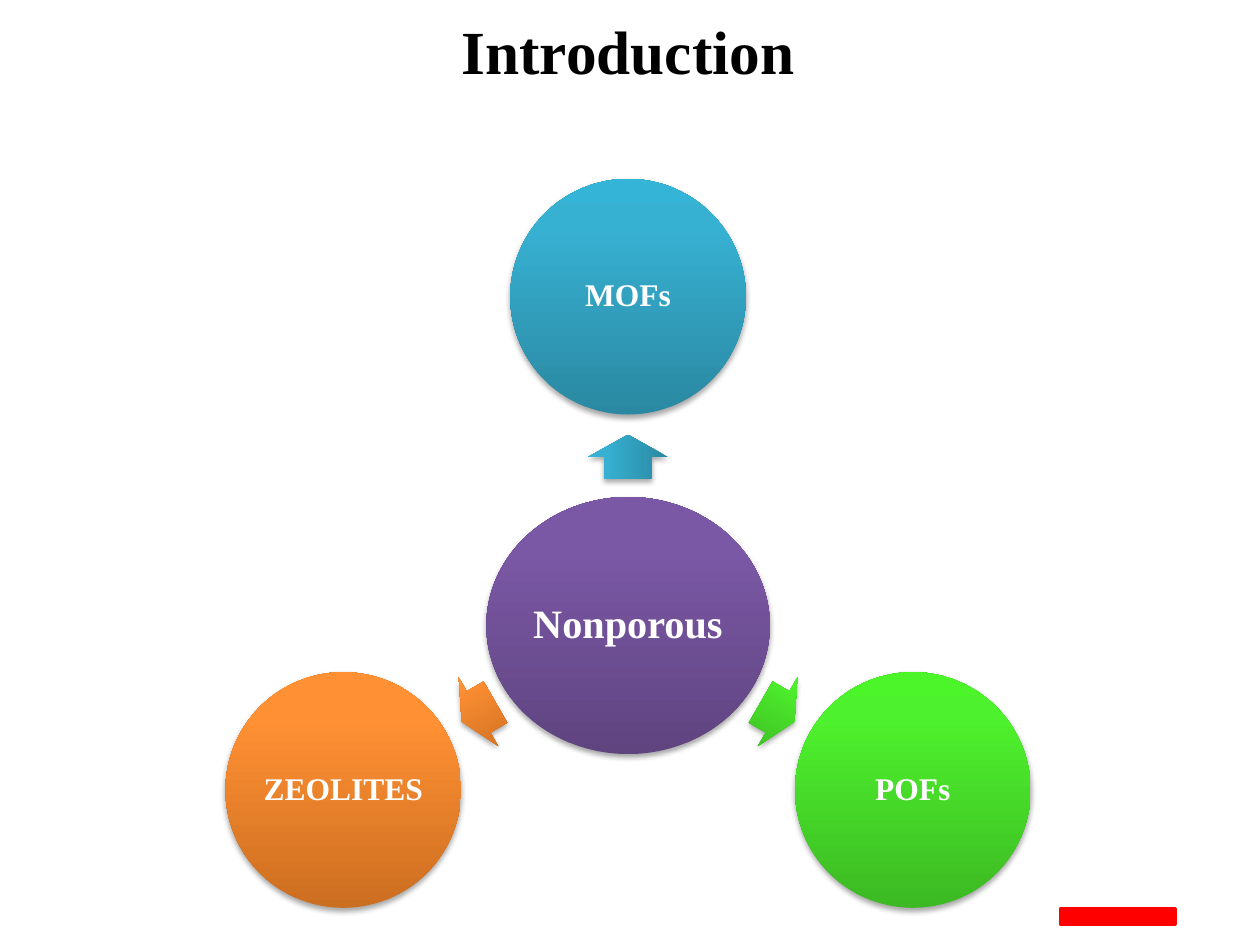
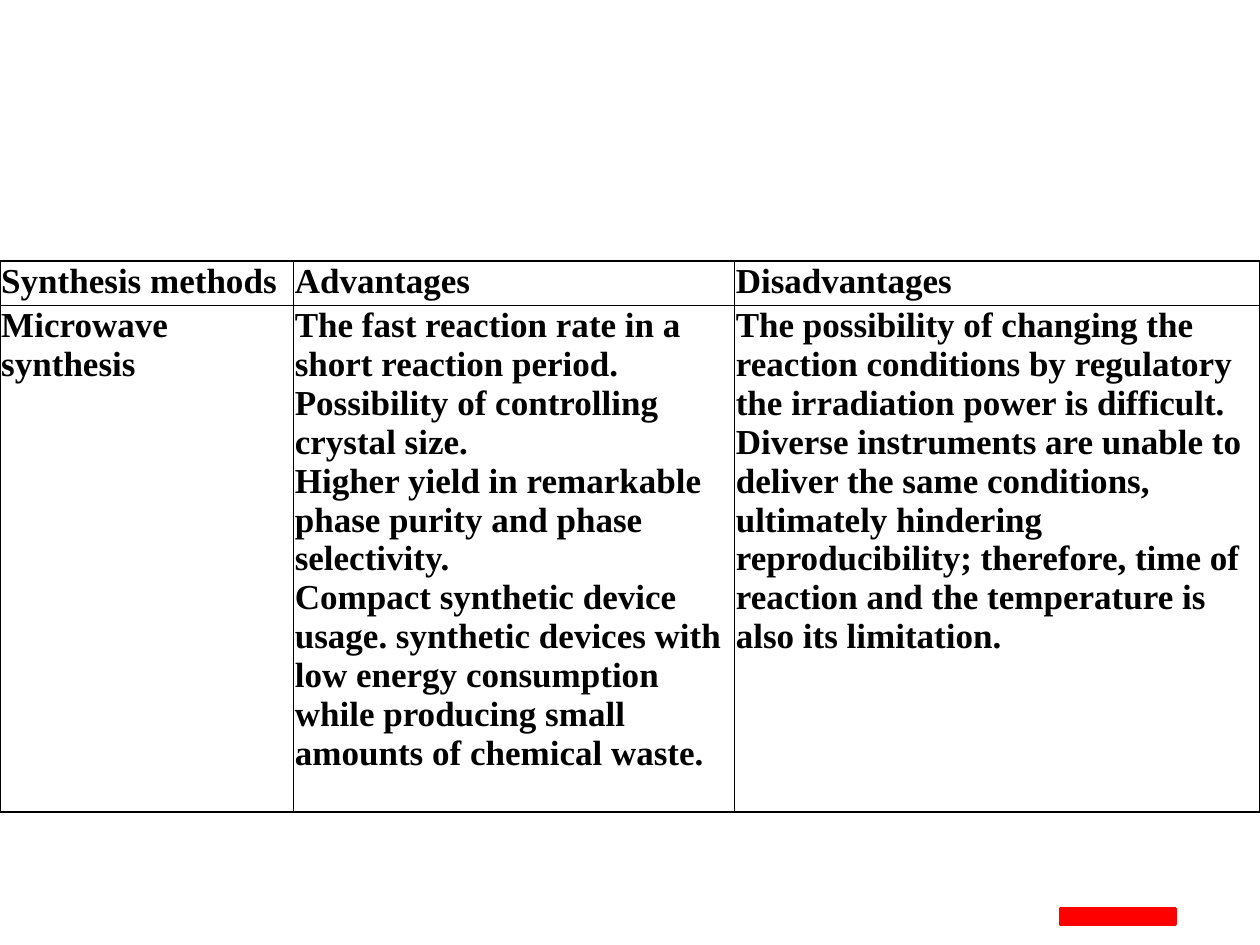
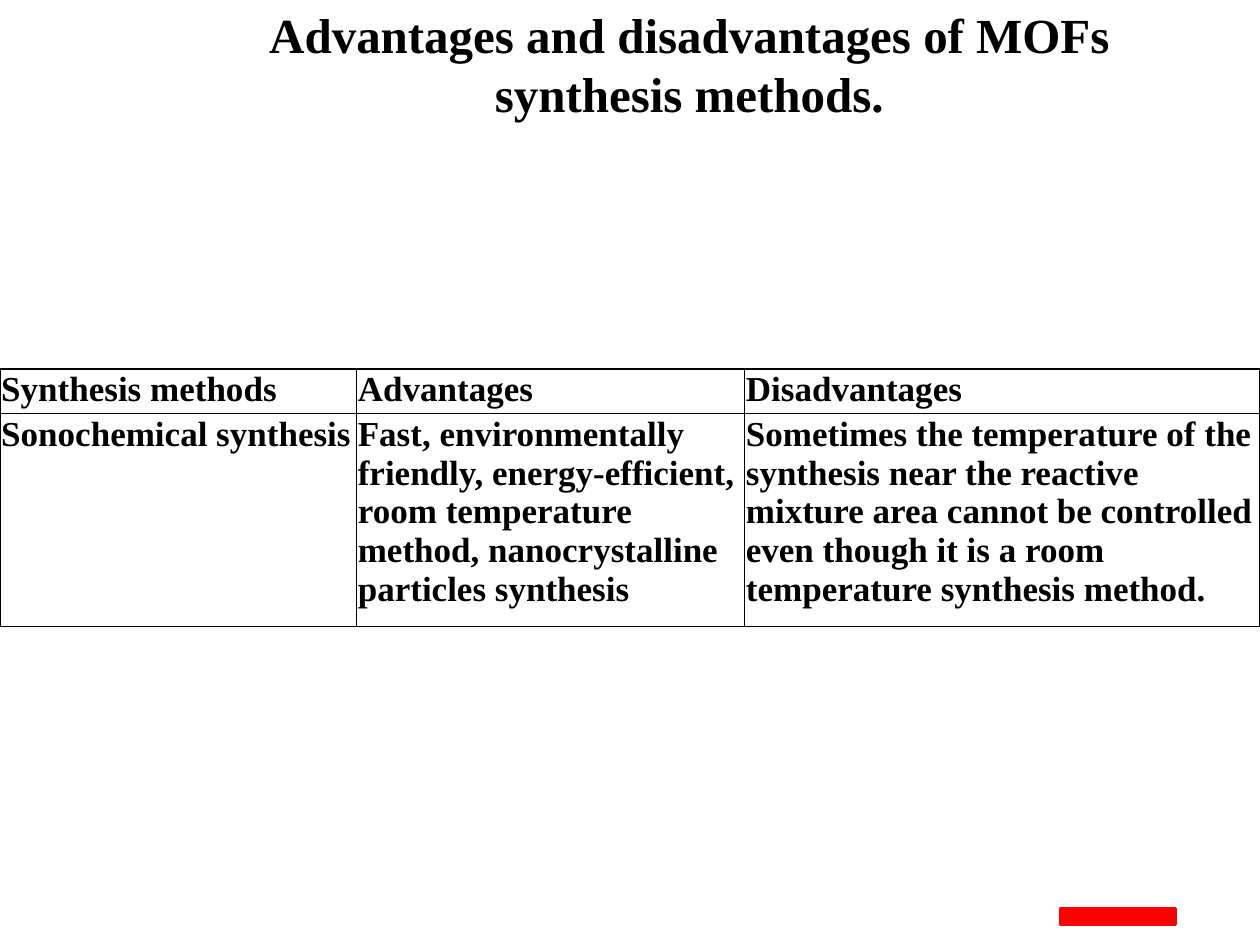
import math

from lxml import etree
from pptx import Presentation
from pptx import util as u
from pptx.dml.color import RGBColor
from pptx.enum import shapes, text
from pptx.oxml import parse_xml
from pptx.oxml.ns import nsdecls, qn

Inches = u.Inches
FONT = "Times New Roman"
BLACK, WHITE, RED = "000000", "FFFFFF", "FF0000"
PURPLE = ("5F4480", "7B58A6", "7C57A8")
BLUE = ("2A88A2", "37B1D2", "34B4D6")
GREEN = ("3CB923", "4EF12D", "4CF52A")
ORANGE = ("CC6E20", "FF9034", "FF9136")
SIDES = ("margin_left", "margin_top", "margin_right", "margin_bottom")
HEADINGS = ("Synthesis methods", "Advantages", "Disadvantages")
MICROWAVE = (
    "Microwave synthesis",
    "The fast reaction rate in a short reaction period.\n"
    "Possibility of controlling crystal size.\n"
    "Higher yield in remarkable phase purity and phase selectivity.\n"
    "Compact synthetic device usage. synthetic devices with low energy "
    "consumption while producing small amounts of chemical waste.",
    "The possibility of changing the reaction conditions by regulatory "
    "the irradiation power is difficult.\n"
    "Diverse instruments are unable to deliver the same conditions, "
    "ultimately hindering reproducibility; therefore, time of reaction "
    "and the temperature is also its limitation.",
)
SONOCHEMICAL = (
    "Sonochemical synthesis",
    "Fast, environmentally friendly, energy-efficient, room temperature "
    "method, nanocrystalline particles synthesis",
    "Sometimes the temperature of the synthesis near the reactive mixture "
    "area cannot be controlled even though it is a room temperature "
    "synthesis method.",
)


def color(value):
    return RGBColor.from_string(value)


def apply(target, values):
    for name, value in values.items():
        setattr(target, name, value)


def write(frame, words, size, ink, **para_format):
    para = frame.paragraphs[0]
    para.text = words
    apply(para, para_format)
    for span in para.runs:
        apply(span.font, {"name": FONT, "size": u.Pt(size), "bold": True})
        span.font.color.rgb = color(ink)


def add_title(page, box, words, size, anchor):
    frame = page.shapes.add_textbox(*map(Inches, box)).text_frame
    apply(frame, {"word_wrap": True, "vertical_anchor": anchor})
    write(frame, words, size, BLACK, alignment=text.PP_ALIGN.CENTER)


def add_footer_bar(page, box):
    bar = page.shapes.add_shape(shapes.MSO_SHAPE.RECTANGLE, *map(Inches, box))
    bar.shadow.inherit = False
    bar.fill.solid()
    bar.fill.fore_color.rgb = color(RED)
    bar.line.color.rgb = color(RED)
    bar.line.width = u.Pt(2)


def add_glossy(page, kind, center, size, stops):
    (x, y), (width, height) = center, size
    shape = page.shapes.add_shape(
        kind, Inches(x - width / 2), Inches(y - height / 2),
        Inches(width), Inches(height))
    shape.line.fill.background()
    shape.shadow.inherit = False
    marks = "".join(
        f'<a:gs pos="{place}"><a:srgbClr val="{value}"/></a:gs>'
        for place, value in zip((0, 80000, 100000), stops))
    properties = shape.element.spPr
    properties.find(qn("a:prstGeom")).addnext(parse_xml(
        f'<a:gradFill {nsdecls("a")} rotWithShape="1"><a:gsLst>{marks}</a:gsLst>'
        '<a:lin ang="16200000" scaled="0"/></a:gradFill>'))
    properties.find(qn("a:effectLst")).append(parse_xml(
        f'<a:outerShdw {nsdecls("a")} blurRad="40000" dist="23000" dir="5400000" '
        f'rotWithShape="0"><a:srgbClr val="{BLACK}"><a:alpha val="35000"/>'
        '</a:srgbClr></a:outerShdw>'))
    return shape


def add_circle(page, center, size, stops, words, points):
    circle = add_glossy(page, shapes.MSO_SHAPE.OVAL, center, size, stops)
    frame = circle.text_frame
    apply(frame, dict.fromkeys(SIDES, 0))
    apply(frame, {"word_wrap": False, "vertical_anchor": text.MSO_ANCHOR.MIDDLE})
    write(frame, words, points, WHITE,
          alignment=text.PP_ALIGN.CENTER, line_spacing=0.9)


def add_radial_diagram(page, box):
    left, top, width, _ = box
    diameter, orbit = 1.87, 2.61
    hub = (left + width / 2, top + diameter / 2 + orbit)

    def around(angle, distance):
        turn = math.radians(angle)
        return (hub[0] + distance * math.cos(turn),
                hub[1] + distance * math.sin(turn))

    right, left_arrow = shapes.MSO_SHAPE.RIGHT_ARROW, shapes.MSO_SHAPE.LEFT_ARROW
    add_circle(page, hub, (2.25, 2.04), PURPLE, "Nonporous", 23)
    branches = (
        ("MOFs", BLUE, 270, right, 270, 1.34, 0.35),
        ("POFs", GREEN, 30, right, 30, 1.37, 0.31),
        ("ZEOLITES", ORANGE, 150, left_arrow, 330, 1.37, 0.31),
    )
    for words, stops, angle, kind, rotation, distance, length in branches:
        arrow = add_glossy(page, kind, around(angle, distance),
                           (length, 0.63), stops)
        arrow.rotation = rotation
        arrow.adjustments[0], arrow.adjustments[1] = 0.6, 0.5
        add_circle(page, around(angle, orbit), (diameter, diameter),
                   stops, words, 18)


def add_borders(cell):
    properties = cell._tc.get_or_add_tcPr()
    for place, side in enumerate(("lnL", "lnR", "lnT", "lnB")):
        line = etree.Element(qn(f"a:{side}"), w=str(u.Pt(1)))
        fill = etree.SubElement(line, qn("a:solidFill"))
        etree.SubElement(fill, qn("a:srgbClr"), val=BLACK)
        properties.insert(place, line)


def add_methods_table(page, box, widths, heights, method):
    rows = (HEADINGS, method)
    holder = page.shapes.add_table(
        len(rows), len(HEADINGS), *map(Inches, box))
    table = holder.table
    apply(table, {"first_row": False, "horz_banding": False})
    for column, width in zip(table.columns, widths):
        column.width = Inches(width)
    for row, height, words in zip(table.rows, heights, rows):
        row.height = Inches(height)
        for cell, entry in zip(row.cells, words):
            apply(cell, dict.fromkeys(SIDES, Inches(0.01)))
            cell.fill.background()
            add_borders(cell)
            write(cell.text_frame, entry, 20, BLACK)
    holder.height = Inches(box[3])


def add_page(deck):
    page = deck.slides.add_slide(deck.slide_layouts[6])
    add_footer_bar(page, (8.42, 7.21, 0.91, 0.13))
    return page


def main():
    deck = Presentation()
    apply(deck, {"slide_width": Inches(10), "slide_height": Inches(7.5)})

    page = add_page(deck)
    add_title(page, (2.25, -0.13, 5.47, 1.05), "Introduction", 35,
              text.MSO_ANCHOR.MIDDLE)
    add_radial_diagram(page, (1.79, 1.42, 6.39, 5.78))

    page = add_page(deck)
    add_methods_table(page, (0, 2.07, 10, 4.37), (2.33, 3.5, 4.17),
                      (0.26, 2.94), MICROWAVE)

    page = add_page(deck)
    add_methods_table(page, (0, 2.93, 10, 2.04), (2.83, 3.08, 4.09),
                      (0.26, 1.21), SONOCHEMICAL)
    add_title(page, (1.33, -0.01, 8.28, 1.04),
              "Advantages and disadvantages of MOFs synthesis methods.", 28,
              text.MSO_ANCHOR.TOP)

    deck.save("out.pptx")


if __name__ == "__main__":
    main()
